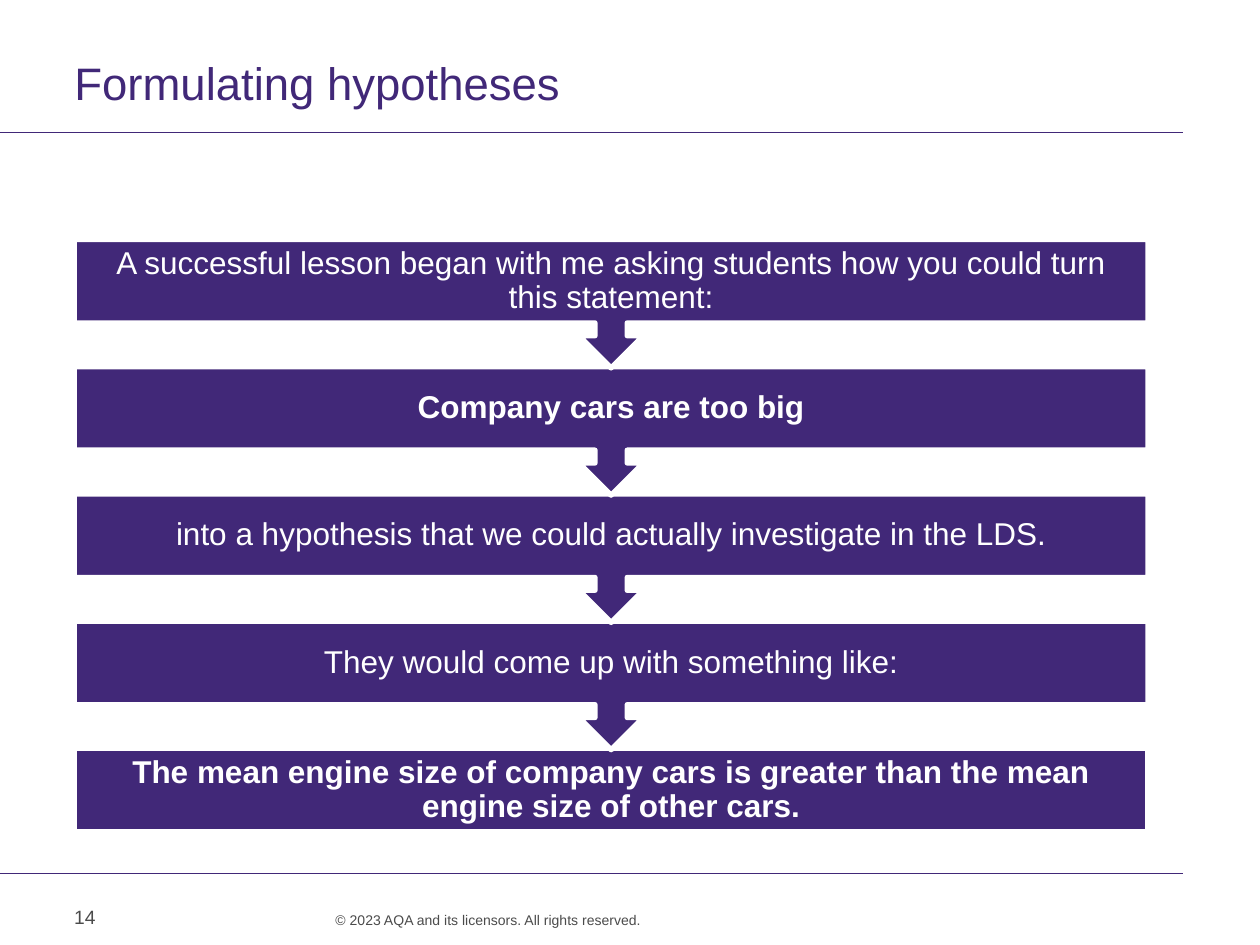
"""Slide with a vertical chain of callouts on formulating hypotheses."""
from lxml import etree
from pptx import Presentation, util as u
from pptx.dml.color import RGBColor
from pptx.enum import shapes, text
from pptx.oxml.ns import qn

PURPLE = RGBColor(0x41, 0x28, 0x78)
GREY = RGBColor(0x4B, 0x4B, 0x4B)
WHITE = RGBColor(0xFF, 0xFF, 0xFF)
COLS, ROWS = 100, 75
CELL = u.Inches(0.1)
STEPS = [
    ("A successful lesson began with me asking students how you could turn this statement:", False),
    ("Company cars are too big", True),
    ("into a hypothesis that we could actually investigate in the LDS.", False),
    ("They would come up with something like:", False),
    ("The mean engine size of company cars is greater than the mean engine size of other cars.", True),
]


def grid(*cells):
    """Turn grid columns and rows into lengths."""
    return [u.Emu(round(c * CELL)) for c in cells]


def set_all(obj, values):
    """Set each named attribute of an object."""
    for name, value in values.items():
        setattr(obj, name, value)


def write(sp, words, color, size, frame, para, bold=False):
    """Put one formatted run of text in a shape."""
    tf = sp.text_frame
    set_all(tf, {"word_wrap": True, **frame})
    p = tf.paragraphs[0]
    set_all(p, para)
    r = p.add_run()
    r.text = words
    set_all(r.font, {"name": "Arial", "size": u.Pt(size), "bold": bold})
    r.font.color.rgb = color


def margins(left, top, right, bottom):
    """Return the text frame margins given in grid cells."""
    names = ("margin_left", "margin_top", "margin_right", "margin_bottom")
    return dict(zip(names, grid(left, top, right, bottom)))


def add_rule(s, row, width):
    """Draw a thin horizontal rule from the left edge."""
    ln = s.shapes.add_connector(shapes.MSO_CONNECTOR.STRAIGHT, *grid(0, row, width, row))
    ln.line.color.rgb = PURPLE
    ln.line.width = u.Pt(0.6)
    etree.SubElement(ln._element.spPr, qn("a:effectLst"))


def add_header(s, box):
    """Place the title and the rule below it."""
    left, top, width, height = box
    sp = s.shapes.add_textbox(*grid(*box))
    write(sp, "Formulating hypotheses", PURPLE, 26, margins(0, 0, 1, 0),
          {"line_spacing": u.Pt(28)})
    add_rule(s, top + height + 1, left + width)


def add_footer(s, box):
    """Place the rule, the page number and the copyright line."""
    left, top, width, height = box
    add_rule(s, top, width)
    sp = s.shapes.add_textbox(*grid(left + 4.9, top + 1.5, 7.6, 4))
    write(sp, "14", GREY, 11, {"vertical_anchor": text.MSO_ANCHOR.MIDDLE}, {})
    sp = s.shapes.add_textbox(*grid(left + 16.7, top + 3, 34.2, 2.6))
    write(sp, "© 2023 AQA and its licensors. All rights reserved.", GREY, 8,
          margins(0, 0, 0, 0),
          {"alignment": text.PP_ALIGN.RIGHT, "line_spacing": u.Pt(10)})


def add_chain(s, box):
    """Stack the steps from the bottom up, each pointing to the next."""
    left, top, width, height = box
    bar = 6.6
    pitch = (height - bar) / (len(STEPS) - 1)
    for i, (words, bold) in reversed(list(enumerate(STEPS))):
        last = i == len(STEPS) - 1
        kind = shapes.MSO_SHAPE.RECTANGLE if last else shapes.MSO_SHAPE.DOWN_ARROW_CALLOUT
        depth = bar if last else pitch + 0.1
        sp = s.shapes.add_shape(kind, *grid(left, top + i * pitch, width, depth))
        sp.shadow.inherit = False
        sp.fill.solid()
        sp.fill.fore_color.rgb = PURPLE
        sp.line.color.rgb = WHITE
        sp.line.width = u.Pt(3)
        write(sp, words, WHITE, 18,
              {"vertical_anchor": text.MSO_ANCHOR.MIDDLE, **margins(1.4, 1.4, 1.4, 1.4)},
              {"alignment": text.PP_ALIGN.CENTER, "line_spacing": 0.9}, bold)


def main():
    """Build and save the slide."""
    prs = Presentation()
    prs.slide_width, prs.slide_height = grid(COLS, ROWS)
    s = prs.slides.add_slide(prs.slide_layouts[6])
    add_header(s, (5.9, 4.8, 88, 4.7))
    add_chain(s, (5.9, 19, 85.2, 47))
    add_footer(s, (0, 69.3, 93.9, 5.7))
    prs.save("out.pptx")


if __name__ == "__main__":
    main()
